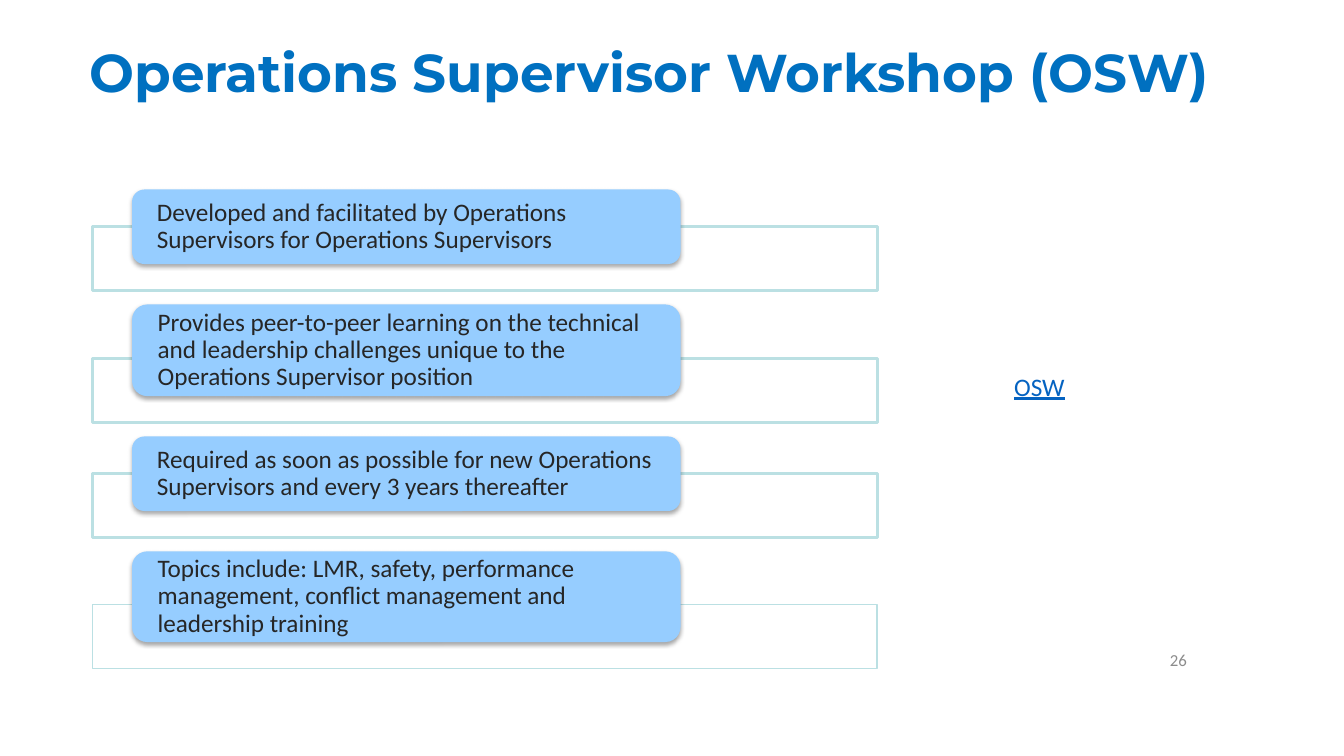
from dataclasses import dataclass

from lxml.etree import SubElement
from pptx import Presentation
from pptx.dml.color import RGBColor as RGB
from pptx.enum.shapes import MSO_SHAPE as SHAPE
from pptx.enum.text import MSO_ANCHOR as ANCHOR, MSO_AUTO_SIZE as AUTO, PP_ALIGN as ALIGN
from pptx.oxml.ns import qn
from pptx.util import Inches, Pt


@dataclass(frozen=True)
class Theme:
    title_font: str = "Montserrat"
    body_font: str = "Calibri"
    title_size: int = 38
    body_size: int = 18
    number_size: int = 12
    title: str = "0070C0"
    text: str = "262626"
    link: str = "0563C1"
    number: str = "8C8C8C"
    card: str = "96CDFF"
    frame: str = "BBE0E3"
    white: str = "FFFFFF"


class Deck:
    def __init__(self, theme):
        self.theme = theme
        self.prs = Presentation()
        self.prs.slide_width, self.prs.slide_height = Inches(13.33), Inches(7.5)
        self.slide = self.prs.slides.add_slide(self.prs.slide_layouts[5])

    def set_text(self, tf, text, size, color, font=None, align=ALIGN.LEFT,
                 anchor=ANCHOR.MIDDLE, spacing=None):
        tf.word_wrap, tf.auto_size, tf.vertical_anchor = True, AUTO.NONE, anchor
        p = tf.paragraphs[0]
        p.text, p.alignment, p.line_spacing = text, align, spacing
        p.font.name, p.font.size = font or self.theme.body_font, Pt(size)
        p.font.color.rgb = RGB.from_string(color)
        return p

    def title(self, text, *box):
        s = self.slide.shapes.title
        s.left, s.top, s.width, s.height = map(Inches, box)
        t = self.theme
        p = self.set_text(s.text_frame, text, t.title_size, t.title, t.title_font,
                          spacing=0.9)
        p.font.bold = True

    def label(self, text, box, size, color, **style):
        s = self.slide.shapes.add_textbox(*map(Inches, box))
        return self.set_text(s.text_frame, text, size, color, **style)

    def shape(self, kind, box, fill):
        s = self.slide.shapes.add_shape(kind, *map(Inches, box))
        s.shadow.inherit = False
        s.fill.solid()
        s.fill.fore_color.rgb = RGB.from_string(fill)
        return s

    def frame(self, *box, weight):
        s = self.shape(SHAPE.RECTANGLE, box, self.theme.white)
        s.line.color.rgb = RGB.from_string(self.theme.frame)
        s.line.width = Pt(weight)

    def card(self, text, *box):
        s = self.shape(SHAPE.ROUNDED_RECTANGLE, box, self.theme.card)
        s.line.fill.background()
        self.drop_shadow(s)
        tf = s.text_frame
        tf.margin_left = tf.margin_right = Inches(0.21)
        tf.margin_top = tf.margin_bottom = 0
        self.set_text(tf, text, self.theme.body_size, self.theme.text, spacing=0.9)

    def drop_shadow(self, s):
        effects = s._element.spPr.find(qn("a:effectLst"))
        shadow = SubElement(effects, qn("a:outerShdw"), blurRad=str(Pt(3.1)),
                            dist=str(Pt(1.8)), dir="5400000", rotWithShape="0")
        color = SubElement(shadow, qn("a:srgbClr"), val="000000")
        SubElement(color, qn("a:alpha"), val="35000")


# Text, card height, frame line weight
POINTS = [
    ("Developed and facilitated by Operations Supervisors for Operations Supervisors", 0.74, 2),
    ("Provides peer-to-peer learning on the technical and leadership challenges "
     "unique to the Operations Supervisor position", 0.91, 2),
    ("Required as soon as possible for new Operations Supervisors "
     "and every 3 years thereafter", 0.74, 2),
    ("Topics include: LMR, safety, performance management, conflict management "
     "and leadership training", 0.9, 1),
]
FRAME_HEIGHT, OVERLAP, GAP = 0.63, 0.37, 0.14


def main():
    theme = Theme()
    deck = Deck(theme)
    deck.title("Operations Supervisor Workshop (OSW)", 0.79, 0.37, 12.54, 0.75)

    top = 1.88
    for text, height, weight in POINTS:
        frame_top = top + height - OVERLAP
        deck.frame(0.92, frame_top, 7.78, FRAME_HEIGHT, weight=weight)
        deck.card(text, 1.31, top, 5.44, height)
        top = frame_top + FRAME_HEIGHT + GAP

    p = deck.label("OSW", (9.96, 3.63, 1.05, 0.4), theme.body_size, theme.link,
                   anchor=ANCHOR.TOP)
    p.font.underline = True
    deck.label("26", (9.42, 6.35, 2.45, 0.4), theme.number_size, theme.number,
               align=ALIGN.RIGHT)
    deck.prs.save("out.pptx")


if __name__ == "__main__":
    main()
